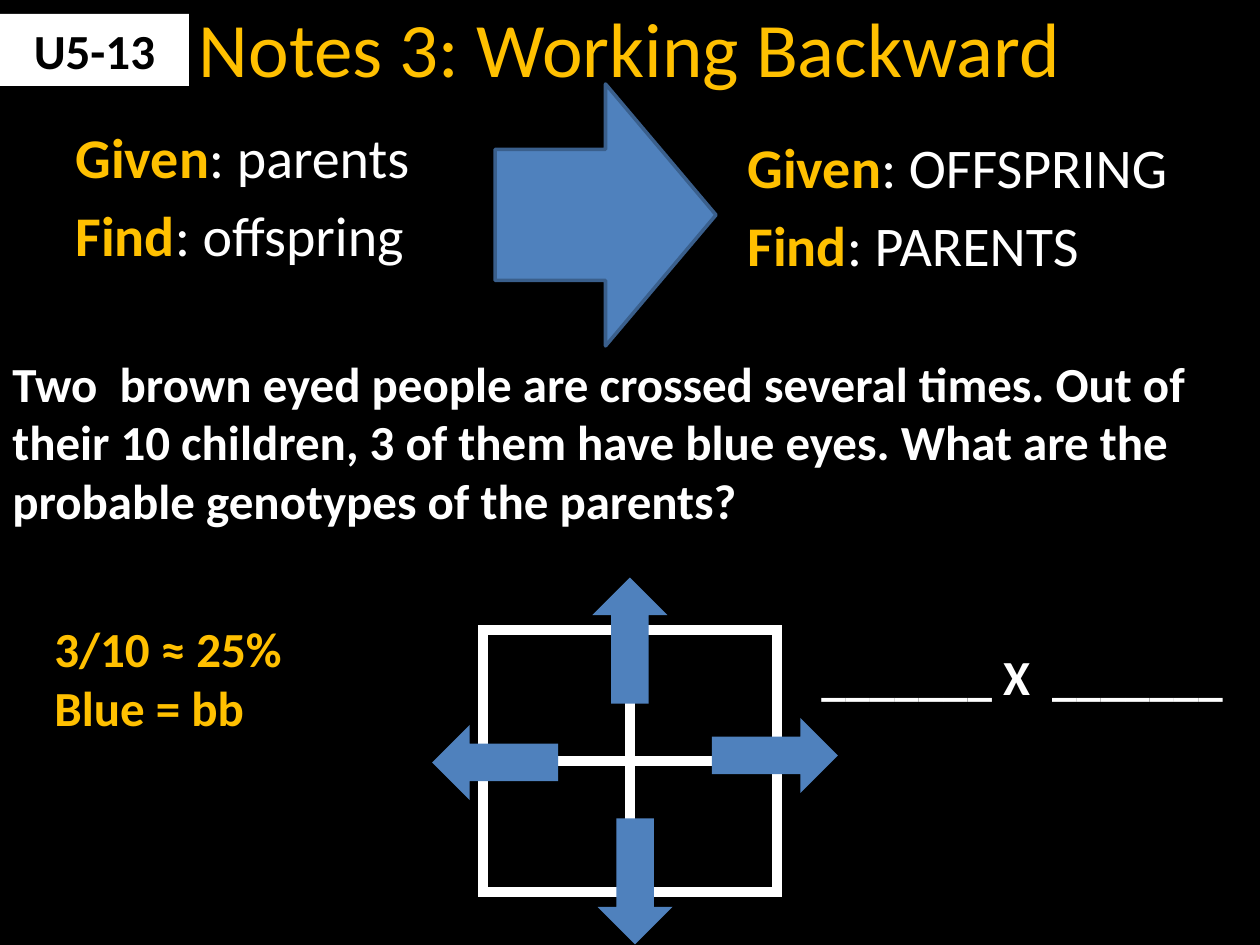
from dataclasses import dataclass

import pptx
import pptx.dml.color
import pptx.enum.shapes
import pptx.enum.text
import pptx.oxml
import pptx.oxml.ns
import pptx.util

PX_PER_INCH = 126
FONT = "Calibri"
COLORS = {
    "black": "000000",
    "white": "FFFFFF",
    "gold": "FFC000",
    "blue": "4F81BD",
    "edge": "3A5F8C",
}
SHAPE = pptx.enum.shapes.MSO_SHAPE
ALIGN = pptx.enum.text.PP_ALIGN
ANCHOR = pptx.enum.text.MSO_ANCHOR


@dataclass
class Box:
    x: int
    y: int
    w: int
    h: int

    def emu(self) -> list:
        return [px(v) for v in (self.x, self.y, self.w, self.h)]


@dataclass
class Arrow:
    box: Box
    rotation: int = 0
    edge_pt: int = 0


@dataclass
class Goal:
    box: Box
    given: str
    find: str


@dataclass
class Note:
    box: Box
    lines: list
    color: str


def px(n: int) -> pptx.util.Emu:
    return pptx.util.Emu(round(n * 914400 / PX_PER_INCH))


def rgb(name: str) -> pptx.dml.color.RGBColor:
    return pptx.dml.color.RGBColor.from_string(COLORS[name])


def format_run(r, size: int, color: str, bold: bool) -> None:
    r.font.name = FONT
    r.font.size = pptx.util.Pt(size)
    r.font.bold = bold
    r.font.color.rgb = rgb(color)


def add_text_box(s, box: Box):
    tf = s.shapes.add_textbox(*box.emu()).text_frame
    tf.word_wrap = True
    return tf


def add_filled_shape(s, kind, box: Box, color: str):
    sp = s.shapes.add_shape(kind, *box.emu())
    sp.shadow.inherit = False
    sp.fill.solid()
    sp.fill.fore_color.rgb = rgb(color)
    sp.line.fill.background()
    return sp


def add_arrow(s, arrow: Arrow) -> None:
    sp = add_filled_shape(s, SHAPE.RIGHT_ARROW, arrow.box, "blue")
    sp.rotation = arrow.rotation
    if arrow.edge_pt:
        sp.line.color.rgb = rgb("edge")
        sp.line.width = pptx.util.Pt(arrow.edge_pt)


def add_goal(s, goal: Goal) -> None:
    tf = add_text_box(s, goal.box)
    for i, (label, value) in enumerate((("Given", goal.given), ("Find", goal.find))):
        p = tf.add_paragraph() if i else tf.paragraphs[0]
        p.space_before = pptx.util.Pt(6.4)
        for text, color, bold in ((label, "gold", True), (": " + value, "white", False)):
            r = p.add_run()
            r.text = text
            format_run(r, 32, color, bold)


def add_note(s, note: Note) -> None:
    tf = add_text_box(s, note.box)
    tf.text = "\n".join(note.lines)
    for p in tf.paragraphs:
        format_run(p.runs[0], 28, note.color, True)


def set_borders(cell, color: str, width_pt: int) -> None:
    tc_pr = cell._tc.get_or_add_tcPr()
    for i, side in enumerate(("lnL", "lnR", "lnT", "lnB")):
        tc_pr.insert(i, pptx.oxml.parse_xml(
            f'<a:{side} {pptx.oxml.ns.nsdecls("a")} w="{pptx.util.Pt(width_pt)}">'
            f'<a:solidFill><a:srgbClr val="{COLORS[color]}"/></a:solidFill></a:{side}>'))


def add_punnett_square(s, box: Box) -> None:
    table = s.shapes.add_table(2, 2, *box.emu()).table
    table.first_row = False
    table.horz_banding = False
    for cell in table.iter_cells():
        cell.fill.solid()
        cell.fill.fore_color.rgb = rgb("black")
        set_borders(cell, "white", 6)


def add_title(s, box: Box, text: str) -> None:
    sp = s.shapes.title
    sp.left, sp.top, sp.width, sp.height = box.emu()
    tf = sp.text_frame
    tf.text = text
    tf.vertical_anchor = ANCHOR.MIDDLE
    p = tf.paragraphs[0]
    p.alignment = ALIGN.CENTER
    format_run(p.runs[0], 44, "gold", False)


def add_badge(s, box: Box, text: str) -> None:
    sp = add_filled_shape(s, SHAPE.RECTANGLE, box, "white")
    tf = sp.text_frame
    tf.text = text
    tf.vertical_anchor = ANCHOR.TOP
    p = tf.paragraphs[0]
    p.alignment = ALIGN.CENTER
    format_run(p.runs[0], 28, "black", True)


GOALS = [
    Goal(Box(63, 116, 432, 179), "parents", "offspring"),
    Goal(Box(735, 126, 483, 179), "OFFSPRING", "PARENTS"),
]
QUESTION = ("Two  brown eyed people are crossed several times. Out of their 10 children, "
            "3 of them have blue eyes. What are the probable genotypes of the parents?")
NOTES = [
    Note(Box(0, 347, 1260, 190), [QUESTION], "white"),
    Note(Box(809, 640, 473, 72), ["_______ X  _______"], "white"),
    Note(Box(42, 612, 423, 131), ["3/10 ≈ 25%", "Blue = bb"], "gold"),
]
BIG_ARROW = Arrow(Box(495, 84, 221, 262), edge_pt=2)
SMALL_ARROWS = [
    Arrow(Box(x, y, 126, 75), rotation)
    for x, y, rotation in ((712, 718, 0), (432, 725, 180), (572, 844, 90), (567, 603, 270))
]


def main() -> None:
    prs = pptx.Presentation()
    prs.slide_width, prs.slide_height = px(1260), px(945)
    s = prs.slides.add_slide(prs.slide_layouts.get_by_name("Title Only"))
    s.background.fill.solid()
    s.background.fill.fore_color.rgb = rgb("black")

    # Heading and the two kinds of problem
    add_title(s, Box(63, -32, 1134, 158), "Notes 3: Working Backward")
    for goal in GOALS:
        add_goal(s, goal)
    add_arrow(s, BIG_ARROW)

    # Worked question with its Punnett square
    add_punnett_square(s, Box(483, 630, 294, 262))
    for note in NOTES:
        add_note(s, note)
    for arrow in SMALL_ARROWS:
        add_arrow(s, arrow)

    # Page label
    add_badge(s, Box(0, 14, 189, 72), "U5-13")
    prs.save("out.pptx")


if __name__ == "__main__":
    main()
